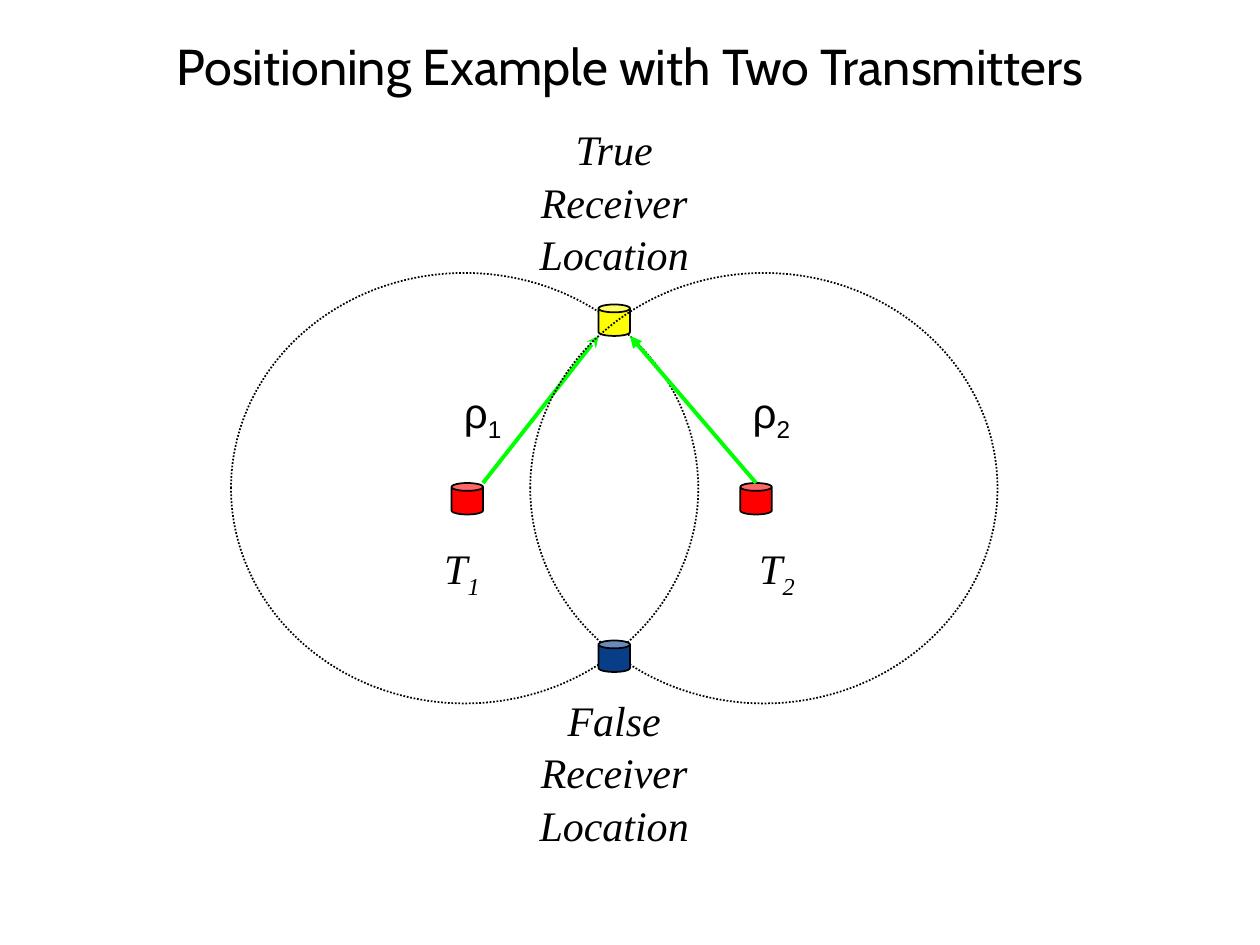
from dataclasses import dataclass

from lxml import etree
from pptx import Presentation
from pptx import util as u
from pptx.dml.color import RGBColor
from pptx.enum import dml, shapes, text
from pptx.oxml.ns import qn

CELL = u.Inches(1) / 24  # grid of 240 columns by 180 rows
CAN_SIZE = 6


@dataclass(frozen=True)
class Theme:
    ink: str = "000000"
    transmitter: str = "FF0000"
    true_receiver: str = "FFFF00"
    false_receiver: str = "073E87"
    range_line: str = "00FF00"
    title_font: str = "Cabin"
    label_font: str = "Times New Roman"
    symbol_font: str = "Arial"
    title_size: float = 28.8
    label_size: float = 24
    outline: float = 1
    range_width: float = 2.25


THEME = Theme()


def cells(*values):
    return [u.Emu(round(value * CELL)) for value in values]


def color(value):
    return RGBColor.from_string(value)


def add_label(slide, box, words, subscript="", font=THEME.label_font,
              size=THEME.label_size, italic=False, centered=True,
              anchor=text.MSO_ANCHOR.TOP, spacing=1.04):
    text_frame = slide.shapes.add_textbox(*cells(*box)).text_frame
    text_frame.word_wrap = True
    text_frame.vertical_anchor = anchor
    text_frame.text = words
    paragraph = text_frame.paragraphs[0]
    paragraph.alignment = text.PP_ALIGN.CENTER if centered else text.PP_ALIGN.LEFT
    paragraph.line_spacing = spacing
    if subscript:
        run = paragraph.add_run()
        run.text = subscript
        run._r.get_or_add_rPr().set("baseline", "-25000")
    for run in paragraph.runs:
        run.font.name = font
        run.font.size = u.Pt(size)
        run.font.italic = italic
        run.font.color.rgb = color(THEME.ink)


def add_outlined(slide, kind, box):
    shape = slide.shapes.add_shape(kind, *cells(*box))
    shape.shadow.inherit = False
    shape.line.color.rgb = color(THEME.ink)
    shape.line.width = u.Pt(THEME.outline)
    return shape


def add_range_circle(slide, column):
    circle = add_outlined(slide, shapes.MSO_SHAPE.OVAL, (column, 52, 89, 82))
    circle.fill.background()
    circle.line.dash_style = dml.MSO_LINE.ROUND_DOT


def add_can(slide, column, row, fill):
    can = add_outlined(slide, shapes.MSO_SHAPE.CAN, (column, row, CAN_SIZE, CAN_SIZE))
    can.adjustments[0] = 0.25
    can.fill.solid()
    can.fill.fore_color.rgb = color(fill)


def add_range_arrow(slide, start, end, head):
    arrow = slide.shapes.add_connector(shapes.MSO_CONNECTOR.STRAIGHT, *cells(*start, *end))
    arrow.line.color.rgb = color(THEME.range_line)
    arrow.line.width = u.Pt(THEME.range_width)
    etree.SubElement(arrow.line._get_or_add_ln(), qn("a:tailEnd"), type=head)
    etree.SubElement(arrow._element.spPr, qn("a:effectLst"))


def main():
    presentation = Presentation()
    presentation.slide_width, presentation.slide_height = cells(240, 180)
    slide = presentation.slides.add_slide(presentation.slide_layouts[6])

    # Title
    add_label(slide, (18.75, 2.5, 202.5, 20), "Positioning Example with Two Transmitters",
              font=THEME.title_font, size=THEME.title_size,
              anchor=text.MSO_ANCHOR.MIDDLE, spacing=1)

    # First transmitter's range, both transmitters and the true receiver
    add_range_circle(slide, 44)
    for column in (86, 141):
        add_can(slide, column, 92, THEME.transmitter)
    add_can(slide, 114, 58, THEME.true_receiver)
    add_range_arrow(slide, (92, 92), (114, 64), "stealth")

    # Second transmitter's range and the false receiver
    add_range_circle(slide, 101)
    add_range_arrow(slide, (144, 92), (120, 64), "triangle")
    add_can(slide, 114, 122, THEME.false_receiver)

    # Transmitter and range labels
    for number, name_column, range_column in (("1", 76, 86), ("2", 136, 141)):
        add_label(slide, (name_column, 101.75, 24, 12), "T", number, italic=True)
        add_label(slide, (range_column, 72, 14, 12), "ρ", number,
                  font=THEME.symbol_font, centered=False)

    # Receiver labels
    for row, truth in ((22, "True"), (130.75, "False")):
        add_label(slide, (94, row, 46, 31.5), f"{truth} Receiver Location", italic=True)

    presentation.save("out.pptx")


if __name__ == "__main__":
    main()
